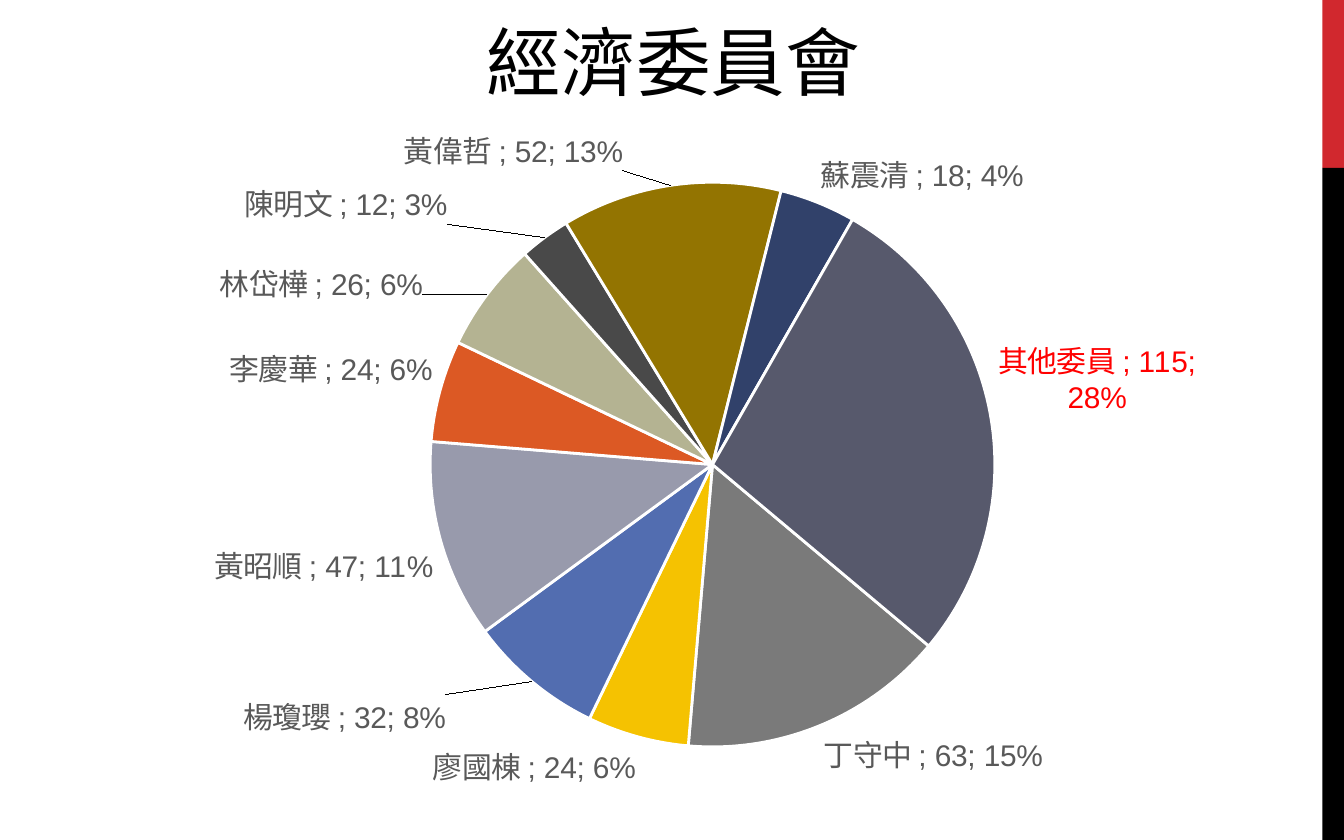
from dataclasses import dataclass

from lxml import etree
from pptx import Presentation
from pptx.chart.data import CategoryChartData
from pptx.dml.color import RGBColor
from pptx.enum.chart import XL_CHART_TYPE as ChartType, XL_LABEL_POSITION as LabelPosition
from pptx.enum.shapes import MSO_SHAPE as Preset
from pptx.enum.text import MSO_ANCHOR as Anchor, PP_ALIGN as Align
from pptx.oxml.ns import qn
from pptx.util import Inches, Pt


@dataclass(frozen=True)
class Theme:
    font: str = "Arial"
    title_size: int = 40
    label_size: int = 16
    ink: str = "000000"
    paper: str = "FFFFFF"
    accent: str = "D1282E"
    label: str = "595959"
    highlight: str = "FF0000"


MEMBERS = [
    ("丁守中", 63, "7A7A7A"),
    ("廖國棟", 24, "F5C201"),
    ("楊瓊瓔", 32, "526DB0"),
    ("黃昭順", 47, "989AAC"),
    ("李慶華", 24, "DC5924"),
    ("林岱樺", 26, "B4B392"),
    ("陳明文", 12, "494949"),
    ("黃偉哲", 52, "937401"),
    ("蘇震清", 18, "31416A"),
    ("其他委員", 115, "57596C"),
]
LABEL_SHIFTS = {
    "楊瓊瓔": (-0.07, 0.01),
    "林岱樺": (-0.05, 0.02),
    "陳明文": (-0.08, -0.01),
    "黃偉哲": (-0.04, -0.01),
}
OTHERS = "其他委員"


def style_font(font, *, name, size, color):
    font.name = name
    font.size = Pt(size)
    font.bold = False
    font.color.rgb = RGBColor.from_string(color)


def write_text(frame, text, *, align, spacing, **font_format):
    paragraph = frame.paragraphs[0]
    paragraph.alignment = align
    paragraph.line_spacing = spacing
    run = paragraph.add_run()
    run.text = text
    style_font(run.font, **font_format)


def manual_layout(**settings):
    layout = etree.Element(qn("c:layout"))
    manual = etree.SubElement(layout, qn("c:manualLayout"))
    for tag, value in settings.items():
        etree.SubElement(manual, qn(f"c:{tag}")).set("val", str(value))
    return layout


def show_name_value_share(labels):
    for tag in ("showVal", "showCatName", "showPercent"):
        labels.find(qn(f"c:{tag}")).set("val", "1")
    separator = etree.Element(qn("c:separator"))
    separator.text = "; "
    labels.find(qn("c:showBubbleSize")).addnext(separator)
    labels.find(qn("c:txPr")).find(qn("a:bodyPr")).set("wrap", "square")


class SlideBuilder:
    def __init__(self, deck, theme):
        self.deck = deck
        self.theme = theme
        self.slide = deck.slides.add_slide(deck.slide_layouts[5])

    def area(self, left, top, width, height):
        across, down = self.deck.slide_width, self.deck.slide_height
        return (int(left * across), int(top * down),
                int(width * across), int(height * down))

    def title(self, text, share):
        title = self.slide.shapes.title
        title.left, title.top, title.width, title.height = self.area(*share)
        frame = title.text_frame
        frame.word_wrap = True
        frame.vertical_anchor = Anchor.MIDDLE
        frame.margin_left = frame.margin_right = Inches(0.08)
        frame.margin_top = frame.margin_bottom = Inches(0.04)
        write_text(frame, text, align=Align.CENTER, spacing=0.8,
                   name=self.theme.font, size=self.theme.title_size, color=self.theme.ink)

    def bar(self, share, color):
        bar = self.slide.shapes.add_shape(Preset.RECTANGLE, *self.area(*share))
        bar.shadow.inherit = False
        bar.fill.solid()
        bar.fill.fore_color.rgb = RGBColor.from_string(color)
        bar.line.fill.background()

    def pie(self, members, share, *, start, plot):
        counts = CategoryChartData()
        counts.categories = [f"{name} " for name, _, _ in members]
        counts.add_series("Series 1", [count for _, count, _ in members])
        chart = self.slide.shapes.add_chart(ChartType.PIE, *self.area(*share), counts).chart
        chart.has_title = False
        chart.has_legend = False
        style_font(chart.font, name=self.theme.font, size=10, color=self.theme.ink)

        pie = chart.plots[0]
        pie.vary_by_categories = True
        pie_xml = pie._element
        angle = pie_xml.find(qn("c:firstSliceAng"))
        if angle is None:
            angle = etree.SubElement(pie_xml, qn("c:firstSliceAng"))
        angle.set("val", str(start))
        plot_area = pie_xml.getparent()
        for automatic in plot_area.findall(qn("c:layout")):
            plot_area.remove(automatic)
        plot_area.insert(0, manual_layout(layoutTarget="inner", xMode="edge", yMode="edge", **plot))

        series = pie.series[0]
        self.label(series.data_labels, self.theme.label)
        labels_xml = series._element.find(qn("c:dLbls"))
        show_name_value_share(labels_xml)
        for index, (name, _, color) in enumerate(members):
            point = series.points[index]
            self.slice(point, color)
            if name in LABEL_SHIFTS or name == OTHERS:
                self.label(point.data_label,
                           self.theme.highlight if name == OTHERS else self.theme.label)
                label_xml = labels_xml.findall(qn("c:dLbl"))[-1]
                show_name_value_share(label_xml)
                if name in LABEL_SHIFTS:
                    x, y = LABEL_SHIFTS[name]
                    label_xml.find(qn("c:idx")).addnext(manual_layout(x=x, y=y))

    def label(self, label, color):
        style_font(label.font, name=self.theme.font, size=self.theme.label_size, color=color)
        label.position = LabelPosition.OUTSIDE_END

    def slice(self, point, color):
        point.format.fill.solid()
        point.format.fill.fore_color.rgb = RGBColor.from_string(color)
        point.format.line.width = Pt(1.5)
        point.format.line.color.rgb = RGBColor.from_string(self.theme.paper)


def main():
    deck = Presentation()
    deck.slide_width, deck.slide_height = Inches(10), Inches(6.25)
    theme = Theme()
    page = SlideBuilder(deck, theme)
    page.bar((0.984, 0, 0.016, 0.2), theme.accent)
    page.bar((0.984, 0.2, 0.016, 0.8), theme.ink)
    page.pie(MEMBERS, (0.069, 0.134, 0.862, 0.83), start=130,
             plot={"x": 0.29, "y": 0.1, "w": 0.49, "h": 0.81})
    page.title("經濟委員會", (0.07, 0.03, 0.862, 0.104))
    deck.save("out.pptx")


if __name__ == "__main__":
    main()
